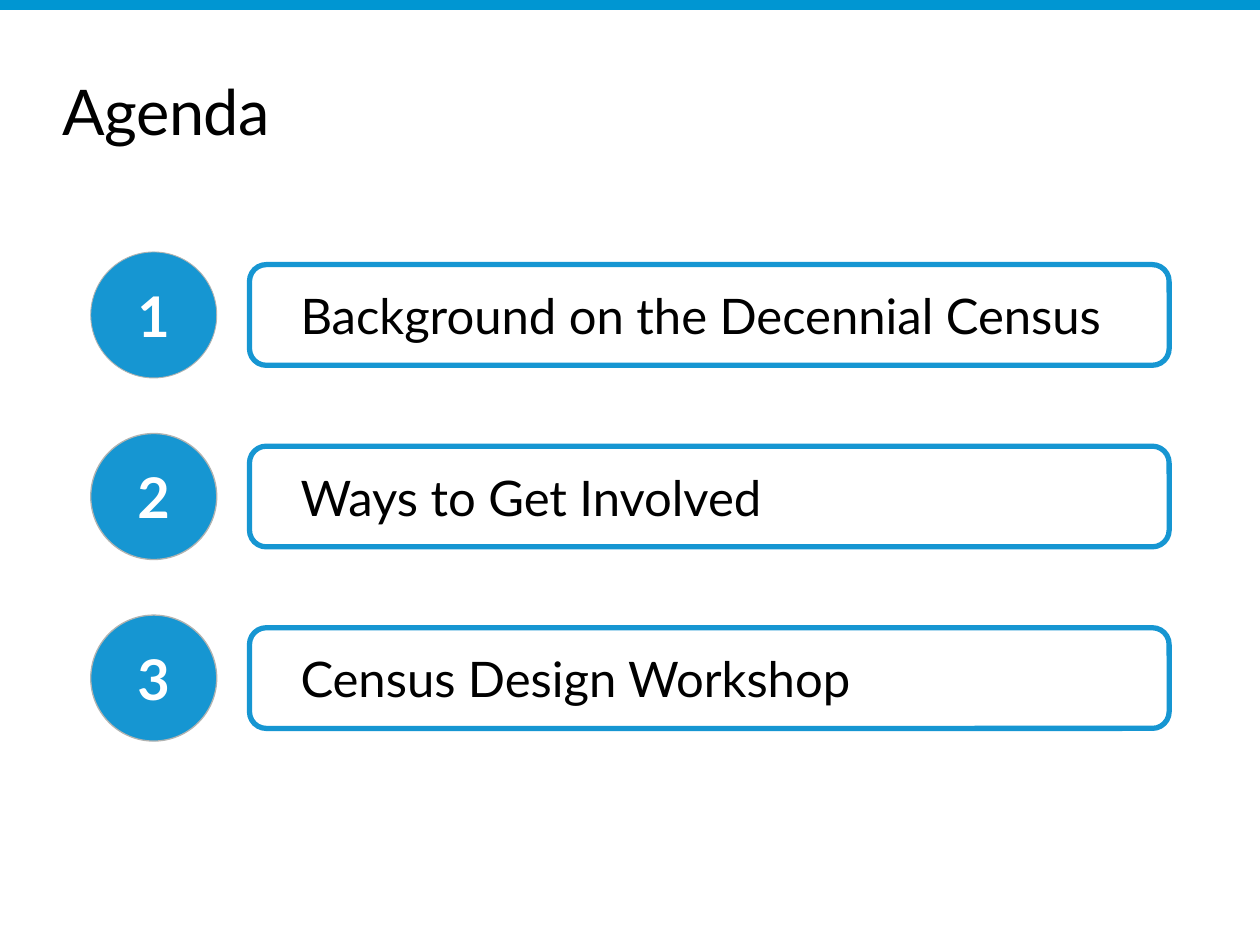
from dataclasses import dataclass

import pptx
import pptx.dml.color
import pptx.enum.shapes
import pptx.enum.text
import pptx.shapes.autoshape
import pptx.slide
import pptx.text.text
import pptx.util
from pptx.dml.color import RGBColor
from pptx.util import Cm, Pt

BAR_BLUE = RGBColor(0x00, 0x96, 0xD2)
BLUE = RGBColor(0x16, 0x96, 0xD2)
GRAY = RGBColor(0xB1, 0xB3, 0xB1)
WHITE = RGBColor(0xFF, 0xFF, 0xFF)
BLACK = RGBColor(0x00, 0x00, 0x00)
FONT = "Lato"

SHAPES = pptx.enum.shapes.MSO_SHAPE
ALIGN = pptx.enum.text.PP_ALIGN
ANCHOR = pptx.enum.text.MSO_ANCHOR

FIRST_TOP = Cm(5.08)
ROW_STEP = Cm(3.66)
CIRCLE_LEFT = Cm(1.83)
CIRCLE_SIZE = Cm(2.54)
LABEL_LEFT = Cm(5.03)
LABEL_WIDTH = Cm(18.54)
LABEL_HEIGHT = Cm(2.03)
LABEL_INDENT = Cm(0.93)


@dataclass
class AgendaItem:
    number: int
    topic: str
    circle_line: float = 0.75


ITEMS = [
    AgendaItem(1, "Background on the Decennial Census", circle_line=0.5),
    AgendaItem(2, "Ways to Get Involved"),
    AgendaItem(3, "Census Design Workshop"),
]


def write(frame: pptx.text.text.TextFrame, text: str, size: float,
          color: RGBColor, align: ALIGN, bold: bool = False) -> None:
    frame.text = text
    frame.word_wrap = True
    para = frame.paragraphs[0]
    para.alignment = align
    font = para.runs[0].font
    font.name, font.size, font.bold = FONT, Pt(size), bold
    font.color.rgb = color


def add_box(page: pptx.slide.Slide, kind: SHAPES, left: int, top: int,
            width: int, height: int, fill: RGBColor) -> pptx.shapes.autoshape.Shape:
    """Add a filled shape without shadow or outline, its text centred vertically."""
    box = page.shapes.add_shape(kind, left, top, width, height)
    box.shadow.inherit = False
    box.fill.solid()
    box.fill.fore_color.rgb = fill
    box.line.fill.background()
    box.text_frame.vertical_anchor = ANCHOR.MIDDLE
    return box


def outline(box: pptx.shapes.autoshape.Shape, color: RGBColor, width: float) -> None:
    box.line.color.rgb = color
    box.line.width = Pt(width)


def add_title(page: pptx.slide.Slide, text: str) -> None:
    box = page.shapes.add_textbox(Cm(1.27), Cm(1.47), Cm(22.86), Cm(1.57))
    frame = box.text_frame
    frame.margin_left = frame.margin_right = 0
    frame.margin_top = frame.margin_bottom = 0
    write(frame, text, 36, BLACK, ALIGN.LEFT)
    span = frame.paragraphs[0].runs[0]
    span._r.get_or_add_rPr().set("spc", "-40")


def add_item(page: pptx.slide.Slide, item: AgendaItem, top: int) -> None:
    circle = add_box(page, SHAPES.OVAL, CIRCLE_LEFT, top,
                     CIRCLE_SIZE, CIRCLE_SIZE, BLUE)
    outline(circle, GRAY, item.circle_line)
    write(circle.text_frame, str(item.number), 32, WHITE, ALIGN.CENTER, bold=True)

    label_top = top + (CIRCLE_SIZE - LABEL_HEIGHT) // 2
    label = add_box(page, SHAPES.ROUNDED_RECTANGLE, LABEL_LEFT, label_top,
                    LABEL_WIDTH, LABEL_HEIGHT, WHITE)
    outline(label, BLUE, 3)
    label.text_frame.margin_left = LABEL_INDENT
    write(label.text_frame, item.topic, 28, BLACK, ALIGN.LEFT)


def main() -> None:
    deck = pptx.Presentation()
    deck.slide_width, deck.slide_height = Cm(25.4), Cm(19.05)
    page = deck.slides.add_slide(deck.slide_layouts[6])
    add_box(page, SHAPES.RECTANGLE, 0, 0, deck.slide_width, Cm(0.2), BAR_BLUE)
    add_title(page, "Agenda")
    for row, item in enumerate(ITEMS):
        add_item(page, item, FIRST_TOP + row * ROW_STEP)
    deck.save("out.pptx")


if __name__ == "__main__":
    main()
